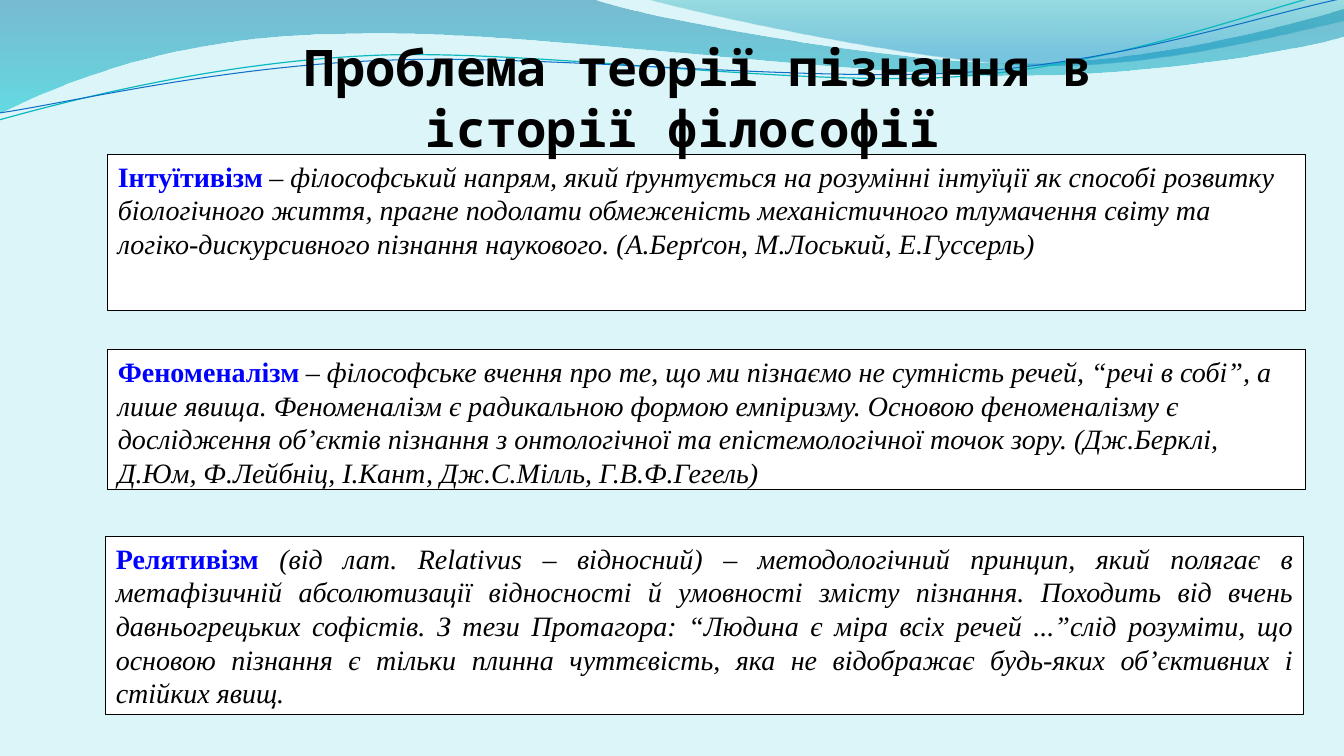
import pptx
import pptx.util
import pptx.dml.color
import pptx.enum.shapes
import pptx.enum.text
from dataclasses import dataclass
from lxml import etree

Inches = pptx.util.Inches
Pt = pptx.util.Pt
ALIGN = pptx.enum.text.PP_ALIGN
TAG = "{http://schemas.openxmlformats.org/drawingml/2006/main}"


@dataclass(frozen=True)
class Theme:
    back: str = "DBF5F9"
    paper: str = "FFFFFF"
    ink: str = "000000"
    term: str = "0000FF"
    gap: str = "404040"
    teal: str = "0AB8BF"
    blue: str = "0F6FC6"
    serif: str = "Times New Roman"
    sans: str = "League Spartan"
    mono: str = "Noto Sans Mono"
    head: int = 36
    body: int = 20
    small: int = 18


def rgb(code):
    return pptx.dml.color.RGBColor.from_string(code)


def add_run(para, text, font, size, color, bold=False, italic=False):
    run = para.add_run()
    run.text = text
    run.font.name = font
    run.font.size = Pt(size)
    run.font.color.rgb = rgb(color)
    run.font.bold = bold
    run.font.italic = italic


class Deck:
    def __init__(self, theme):
        self.theme = theme
        self.file = pptx.Presentation()
        self.file.slide_width = Inches(13.33)
        self.file.slide_height = Inches(7.5)
        self.slide = self.file.slides.add_slide(self.file.slide_layouts[5])
        fill = self.slide.background.fill
        fill.solid()
        fill.fore_color.rgb = rgb(theme.back)

    def draw(self, start, steps, close):
        """Add an outline; a step is a line (x, y) or a curve of six numbers."""
        ends = [(Inches(step[-2]), Inches(step[-1])) for step in steps]
        form = self.slide.shapes.build_freeform(*map(Inches, start))
        form.add_line_segments(ends, close=close)
        shape = form.convert_to_shape()
        shape.shadow.inherit = False
        lines = list(shape.element.spPr.iter(TAG + "lnTo"))
        for line, step in zip(lines, steps):
            if len(step) == 6:
                bend = etree.Element(TAG + "cubicBezTo")
                for x, y in zip(step[::2], step[1::2]):
                    etree.SubElement(bend, TAG + "pt",
                                     x=str(Inches(x) - shape.left),
                                     y=str(Inches(y) - shape.top))
                line.getparent().replace(line, bend)
        return shape

    def wave(self, start, steps, stops):
        """Add a band shaded downward; stops are (place, colour, opacity)."""
        shape = self.draw(start, steps, True)
        shape.line.fill.background()
        shape.fill.gradient()
        shape.fill.gradient_angle = 270
        for stop, (place, color, alpha) in zip(shape.fill.gradient_stops, stops):
            stop.position = place
            stop.color.rgb = rgb(color)
        nodes = shape.element.spPr.iter(TAG + "srgbClr")
        for node, (place, color, alpha) in zip(nodes, stops):
            etree.SubElement(node, TAG + "alpha", val=str(alpha * 1000))

    def curve(self, start, steps, color, width):
        shape = self.draw(start, steps, False)
        shape.fill.background()
        shape.line.color.rgb = rgb(color)
        shape.line.width = Pt(width)

    def card(self, left, top, height, term, text, dash=False, align=ALIGN.LEFT):
        look = self.theme
        shape = self.slide.shapes.add_shape(
            pptx.enum.shapes.MSO_SHAPE.RECTANGLE,
            Inches(left), Inches(top), Inches(11.88), Inches(height))
        shape.shadow.inherit = False
        shape.fill.solid()
        shape.fill.fore_color.rgb = rgb(look.paper)
        shape.line.color.rgb = rgb(look.ink)
        shape.line.width = Pt(0.75)
        frame = shape.text_frame
        frame.word_wrap = True
        frame.vertical_anchor = pptx.enum.text.MSO_ANCHOR.TOP
        para = frame.paragraphs[0]
        para.alignment = align
        add_run(para, term, look.serif, look.body, look.term, bold=True)
        if dash:
            add_run(para, " ", look.sans, look.small, look.gap)
            add_run(para, "– ", look.serif, look.body, look.ink)
        add_run(para, text, look.serif, look.body, look.ink, italic=True)

    def title(self, text):
        """Set the title and bring it in front of the other shapes."""
        look = self.theme
        shape = self.slide.shapes.title
        shape.left, shape.top = Inches(2.2), Inches(0.31)
        shape.width, shape.height = Inches(9.45), Inches(0.71)
        frame = shape.text_frame
        frame.word_wrap = True
        frame.auto_size = pptx.enum.text.MSO_AUTO_SIZE.SHAPE_TO_FIT_TEXT
        frame.vertical_anchor = pptx.enum.text.MSO_ANCHOR.TOP
        para = frame.paragraphs[0]
        para.alignment = ALIGN.CENTER
        add_run(para, text, look.mono, look.head, look.ink, bold=True)
        shape.element.getparent().append(shape.element)


def main():
    theme = Theme()
    deck = Deck(theme)

    deck.wave((0, -0.01), [(5.87, -0.01),
                           (6.34, 0.17, 8.85, 0.63, 10.11, 0.63),
                           (11.38, 0.63, 12.78, 0.26, 13.33, 0.09),
                           (13.35, 0.36),
                           (13.11, 0.44, 11.6, 0.76, 9.94, 0.75),
                           (8.29, 0.75, 5.09, 0.28, 3.43, 0.34),
                           (1.72, 0.35, 0.61, 0.83, -0.01, 1.13),
                           (0, -0.01)],
              [(0, "0074A1", 45), (1, "00C6CF", 55)])
    deck.wave((6.39, -0.01), [(6.79, 0.11, 9.09, 0.62, 10.25, 0.65),
                              (11.41, 0.69, 12.82, 0.32, 13.33, 0.21),
                              (13.33, 0),
                              (6.39, -0.01)],
              [(0, "00A1A9", 30), (0.8, "008BBF", 45)])
    deck.curve((-0.01, 1.19), [(0.64, 1.01, 2.11, 0.62, 3.69, 0.55),
                               (5.27, 0.48, 7.9, 0.87, 9.5, 0.76),
                               (11.1, 0.65, 12.52, 0.08, 13.31, -0.1)],
               theme.teal, 0.85)
    deck.curve((0, 1.12), [(0.63, 1.03, 2.18, 0.66, 3.78, 0.6),
                           (5.37, 0.53, 7.96, 0.82, 9.55, 0.72),
                           (11.15, 0.62, 12.55, 0.14, 13.34, -0.02)],
               theme.blue, 0.75)

    deck.card(1.07, 1.53, 1.55, "Інтуїтивізм",
              "філософський напрям, який ґрунтується на розумінні інтуїції як "
              "способі розвитку біологічного життя, прагне подолати обмеженість "
              "механістичного тлумачення світу та логіко-дискурсивного пізнання "
              "наукового. (А.Берґсон, М.Лоський, Е.Гуссерль)", dash=True)
    deck.card(1.07, 3.47, 1.39, "Феноменалізм",
              "філософське вчення про те, що ми пізнаємо не сутність речей, "
              "“речі в собі”, а лише явища. Феноменалізм є радикальною формою "
              "емпіризму. Основою феноменалізму є дослідження об’єктів пізнання "
              "з онтологічної та епістемологічної точок зору. (Дж.Берклі, Д.Юм, "
              "Ф.Лейбніц, І.Кант, Дж.С.Мілль, Г.В.Ф.Гегель)", dash=True)
    deck.card(1.05, 5.32, 1.77, "Релятивізм ",
              "(від лат. Relativus – відносний) – методологічний принцип, який "
              "полягає в метафізичній абсолютизації відносності й умовності "
              "змісту пізнання. Походить від вчень давньогрецьких софістів. "
              "З тези Протагора: “Людина є міра всіх речей ...”слід розуміти, "
              "що основою пізнання є тільки плинна чуттєвість, яка не "
              "відображає будь-яких об’єктивних і стійких явищ. ",
              align=ALIGN.JUSTIFY)
    deck.title("Проблема теорії пізнання в історії філософії ")
    deck.file.save("out.pptx")


if __name__ == "__main__":
    main()
